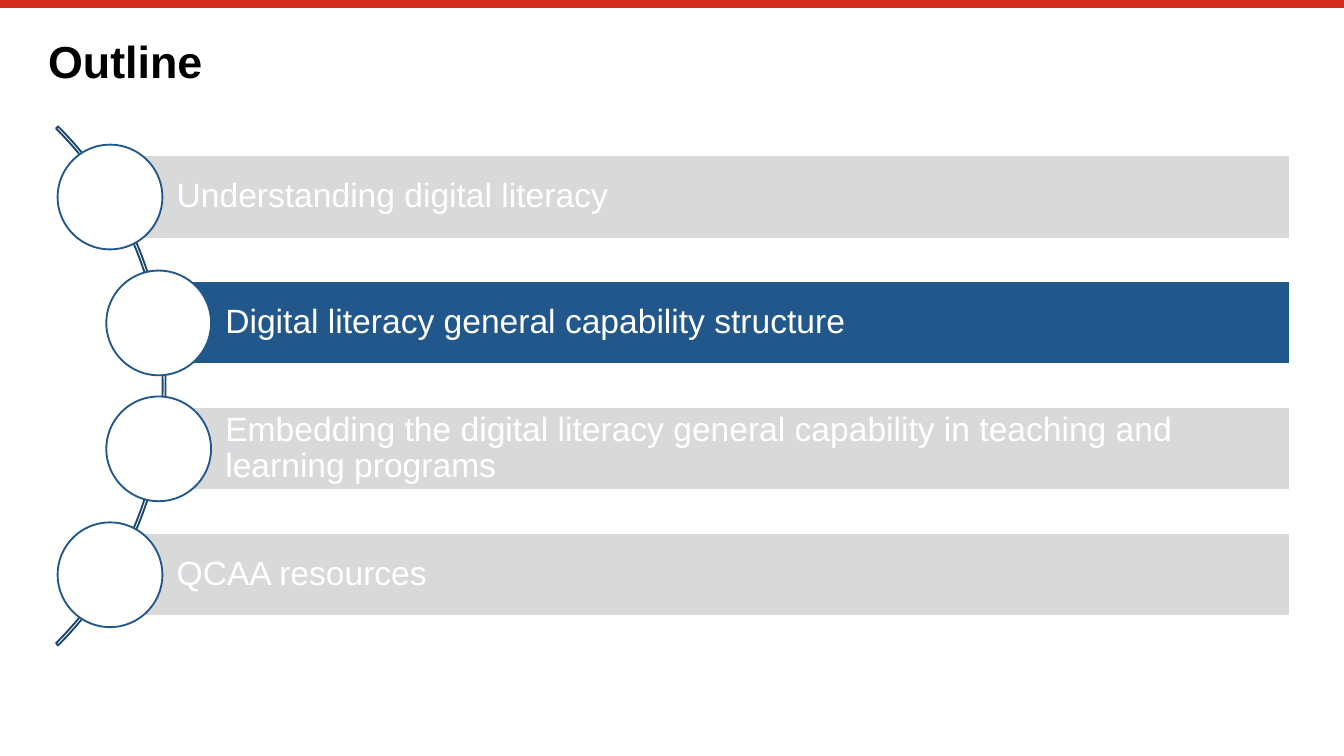
import pptx
import pptx.util
import pptx.dml.color
import pptx.enum.shapes
import pptx.enum.text
import lxml.etree

Cm = pptx.util.Cm
Pt = pptx.util.Pt
kinds = pptx.enum.shapes.MSO_SHAPE
anchor = pptx.enum.text.MSO_ANCHOR
align = pptx.enum.text.PP_ALIGN

hues = {"red": "D52B1E", "black": "000000", "white": "FFFFFF",
        "gray": "D9D9D9", "blue": "21578A", "navy": "1A466F"}


def paint(shape, fill, line):
    shape.shadow.inherit = False
    if fill:
        shape.fill.solid()
        shape.fill.fore_color.rgb = pptx.dml.color.RGBColor.from_string(hues[fill])
    else:
        shape.fill.background()
    shape.line.color.rgb = pptx.dml.color.RGBColor.from_string(hues[line])
    shape.line.width = Pt(1)


def write(shape, text, frame, font, color):
    box = shape.text_frame
    box.text = text
    for name, value in frame.items():
        setattr(box, name, value)
    para = box.paragraphs[0]
    para.alignment = align.LEFT
    para.line_spacing = 0.9
    for name, value in font.items():
        setattr(para.runs[0].font, name, value)
    para.runs[0].font.color.rgb = pptx.dml.color.RGBColor.from_string(hues[color])


deck = pptx.Presentation()
deck.slide_width = Cm(25.4)
deck.slide_height = Cm(14.29)
slide = deck.slides.add_slide(deck.slide_layouts[5])
shapes = slide.shapes

stripe = shapes.add_connector(pptx.enum.shapes.MSO_CONNECTOR.STRAIGHT,
                              0, Cm(0.08), Cm(25.4), Cm(0.08))
stripe.line.color.rgb = pptx.dml.color.RGBColor.from_string(hues["red"])
stripe.line.width = Pt(4.2)
props = stripe.element.spPr
lxml.etree.SubElement(
    props, "{http://schemas.openxmlformats.org/drawingml/2006/main}effectLst")

title = shapes.title
title.left, title.top, title.width, title.height = Cm(0.91), Cm(0.76), Cm(23.6), Cm(0.99)
write(title, "Outline",
      {"margin_left": 0, "margin_right": 0, "margin_top": 0, "margin_bottom": 0,
       "vertical_anchor": anchor.TOP, "word_wrap": True,
       "auto_size": pptx.enum.text.MSO_AUTO_SIZE.NONE},
      {"name": "Arial", "size": Pt(24), "bold": True}, "black")

arc = shapes.add_shape(kinds.BLOCK_ARC, Cm(-10.74), Cm(0.36), Cm(13.87), Cm(13.87))
for index, value in enumerate((189, 27, 0.004)):
    arc.adjustments[index] = value
paint(arc, None, "navy")

topics = [
    ("Understanding digital literacy", 2.08, "gray"),
    ("Digital literacy general capability structure", 3, "blue"),
    ("Embedding the digital literacy general capability in teaching and learning programs",
     3, "gray"),
    ("QCAA resources", 2.08, "gray"),
]
frame = {"margin_left": Cm(1.26), "margin_right": Cm(0.13), "margin_top": Cm(0.13),
         "margin_bottom": Cm(0.13), "vertical_anchor": anchor.MIDDLE, "word_wrap": True}
font = {"name": "Arial", "size": Pt(18)}
right, first, pitch, high, disc = 24.38, 2.94, 2.38, 1.57, 1.98

for row, (text, left, fill) in enumerate(topics):
    top = first + row * pitch
    bar = shapes.add_shape(kinds.RECTANGLE, Cm(left), Cm(top), Cm(right - left), Cm(high))
    paint(bar, fill, "white")
    write(bar, text, frame, font, "white")
    dot = shapes.add_shape(kinds.OVAL, Cm(left - disc / 2), Cm(top + (high - disc) / 2),
                           Cm(disc), Cm(disc))
    paint(dot, "white", "blue")

deck.save("out.pptx")
